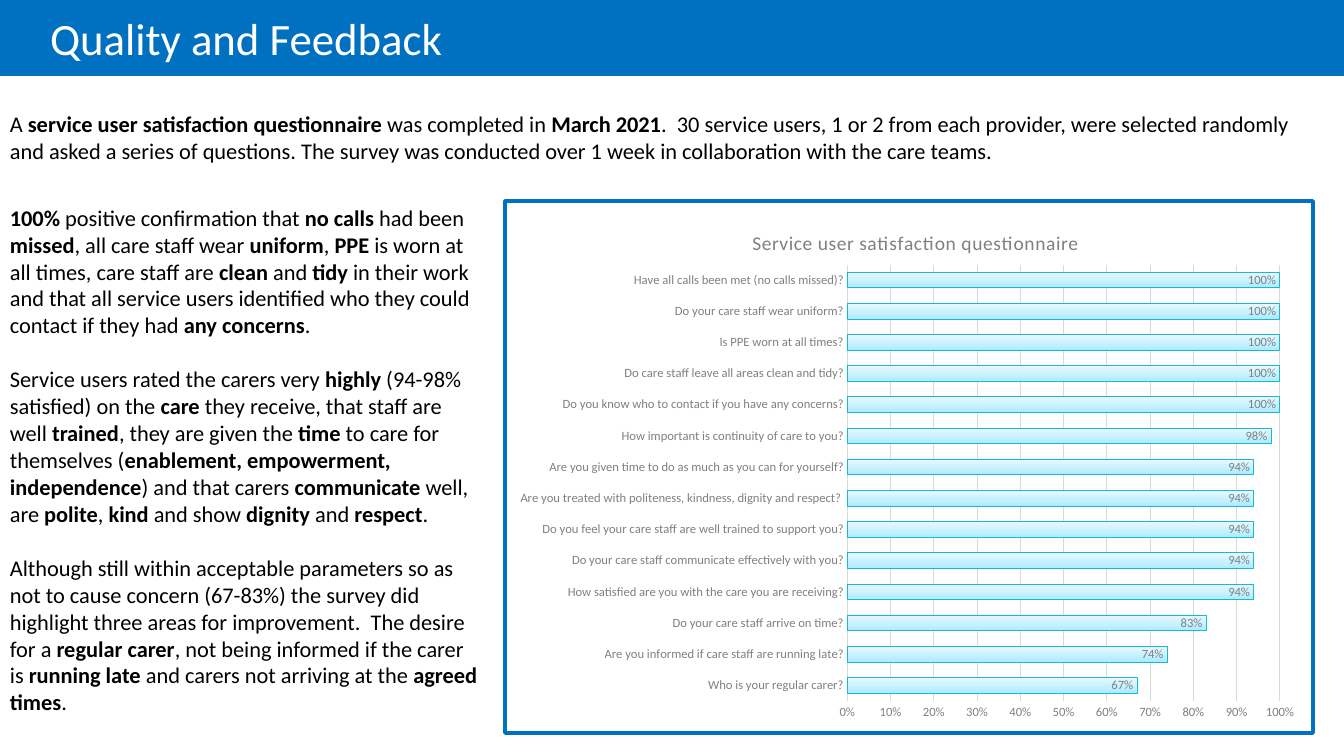
from lxml import etree
from pptx import Presentation
from pptx.chart.data import CategoryChartData
from pptx.dml.color import RGBColor
from pptx.enum.chart import XL_CHART_TYPE, XL_LABEL_POSITION, XL_TICK_MARK
from pptx.enum.shapes import MSO_SHAPE
from pptx.enum.text import MSO_ANCHOR, PP_ALIGN
from pptx.oxml import parse_xml
from pptx.oxml.ns import nsdecls, qn
from pptx.util import Emu, Pt

BAR_CLUSTERED = XL_CHART_TYPE.BAR_CLUSTERED
INSIDE_END = XL_LABEL_POSITION.INSIDE_END
NO_TICK = XL_TICK_MARK.NONE
RECTANGLE = MSO_SHAPE.RECTANGLE
MIDDLE = MSO_ANCHOR.MIDDLE
LEFT = PP_ALIGN.LEFT

PX = 12192000 / 1344
FONT = "Calibri"
COLORS = {
    "blue": "0070C0", "white": "FFFFFF", "black": "000000", "gray": "808080",
    "grid": "D9D9D9", "bar_line": "1BB8D1",
}
BAR_GRADIENT = [(0, "AAEBFF"), (35, "C3F0FF"), (100, "E8F9FF")]

INTRO = [
    "A **service user satisfaction questionnaire **was completed in **March 2021**.  30 service "
    "users, 1 or 2 from each provider, were selected randomly and asked a series of questions. "
    "The survey was conducted over 1 week in collaboration with the care teams.",
]
FINDINGS = [
    "**100%** positive confirmation that **no calls **had been **missed**, all care staff wear "
    "**uniform**, **PPE** is worn at all times, care staff are **clean** and **tidy** in their "
    "work and that all service users identified who they could contact if they had "
    "**any concerns**.",
    "Service users rated the carers very **highly** (94-98% satisfied) on the **care** they "
    "receive, that staff are well **trained**, they are given the **time** to care for themselves "
    "(**enablement, empowerment, independence**) and that carers **communicate** well, are "
    "**polite**, **kind** and show **dignity** and **respect**.",
    "Although still within acceptable parameters so as not to cause concern (67-83%) the survey "
    "did highlight three areas for improvement.  The desire for a **regular carer**, not being "
    "informed if the carer is **running late **and carers not arriving at the **agreed times**.",
]
ANSWERS = [
    ("Who is your regular carer?", 0.67),
    ("Are you informed if care staff are running late?", 0.74),
    ("Do your care staff arrive on time?", 0.83),
    ("How satisfied are you with the care you are receiving?", 0.94),
    ("Do your care staff communicate effectively with you?", 0.94),
    ("Do you feel your care staff are well trained to support you?", 0.94),
    ("Are you treated with politeness, kindness, dignity and respect? ", 0.94),
    ("Are you given time to do as much as you can for yourself?", 0.94),
    ("How important is continuity of care to you?", 0.98),
    ("Do you know who to contact if you have any concerns?", 1),
    ("Do care staff leave all areas clean and tidy?", 1),
    ("Is PPE worn at all times?", 1),
    ("Do your care staff wear uniform?", 1),
    ("Have all calls been met (no calls missed)?", 1),
]


def px(length):
    return Emu(round(length * PX))


class SlideBuilder:
    """Draws styled elements on one slide; boxes are (left, top, width, height) in px."""

    def __init__(self, slide):
        self.slide = slide

    def color(self, name):
        return RGBColor.from_string(COLORS[name])

    def style_font(self, font, size, color, bold=False):
        font.name, font.size, font.bold = FONT, Pt(size), bold
        font.color.rgb = self.color(color)

    def style_line(self, line, color, width):
        line.color.rgb = self.color(color)
        line.width = Pt(width)

    def title_band(self, box, text, indent):
        shape = self.slide.shapes.add_shape(RECTANGLE, *map(px, box))
        shape.shadow.inherit = False
        shape.fill.solid()
        shape.fill.fore_color.rgb = self.color("blue")
        shape.line.fill.background()
        text_frame = shape.text_frame
        text_frame.margin_left = px(indent)
        text_frame.vertical_anchor = MIDDLE
        text_frame.text = text
        paragraph = text_frame.paragraphs[0]
        paragraph.alignment = LEFT
        self.style_font(paragraph.runs[0].font, 32, "white")

    def rich_text(self, box, texts):
        """Adds one paragraph per text; parts between ** marks are bold."""
        text_frame = self.slide.shapes.add_textbox(*map(px, box)).text_frame
        text_frame.word_wrap = True
        for index, text in enumerate(texts):
            paragraph = text_frame.add_paragraph() if index else text_frame.paragraphs[0]
            if index:
                paragraph.space_before = Pt(19.5)
            for position, part in enumerate(text.split("**")):
                if part:
                    run = paragraph.add_run()
                    run.text = part
                    self.style_font(run.font, 16, "black", bold=position % 2 == 1)

    def bar_chart(self, box, title, answers, title_at, plot_box):
        data = CategoryChartData(number_format="0%")
        data.categories = [question for question, share in answers]
        data.add_series("Series 1", [share for question, share in answers])
        chart = self.slide.shapes.add_chart(BAR_CLUSTERED, *map(px, box), data).chart
        self.style_font(chart.font, 10, "black")
        chart.has_legend = False

        chart.has_title = True
        chart.chart_title.include_in_layout = False
        chart.chart_title.text_frame.text = title
        run = chart.chart_title.text_frame.paragraphs[0].runs[0]
        self.style_font(run.font, 14, "gray")
        run.font._element.set("spc", "30")

        for axis in (chart.category_axis, chart.value_axis):
            axis.major_tick_mark = axis.minor_tick_mark = NO_TICK
            self.style_font(axis.tick_labels.font, 9, "gray")
        self.style_line(chart.category_axis.format.line, "grid", 0.75)
        values = chart.value_axis
        values.minimum_scale, values.maximum_scale, values.major_unit = 0, 1, 0.1
        values.format.line.fill.background()
        values.tick_labels.number_format = "0%"
        values.tick_labels.number_format_is_linked = False
        self.style_line(values.major_gridlines.format.line, "grid", 0.75)

        plot = chart.plots[0]
        plot.gap_width = 100
        plot.vary_by_categories = False
        series = plot.series[0]
        series.invert_if_negative = False
        self.style_line(series.format.line, "bar_line", 0.75)
        series.format.fill.gradient()
        series.format.fill.gradient_angle = 90
        self.set_gradient_stops(chart, BAR_GRADIENT)
        labels = series.data_labels
        labels.show_value = True
        labels.position = INSIDE_END
        labels.number_format = "0%"
        labels.number_format_is_linked = False
        self.style_font(labels.font, 9, "gray")

        self.set_layout(chart.element.find(".//" + qn("c:title")), box, title_at)
        self.set_layout(chart.element.find(".//" + qn("c:plotArea")), box, plot_box)
        self.set_border(chart, "blue", 3)

    def set_gradient_stops(self, chart, stops):
        stop_list = chart.element.find(".//" + qn("a:gsLst"))
        for stop in list(stop_list):
            stop_list.remove(stop)
        for percent, color in stops:
            stop = etree.SubElement(stop_list, qn("a:gs"), pos=str(percent * 1000))
            etree.SubElement(stop, qn("a:srgbClr"), val=color)

    def set_layout(self, parent, chart_box, place):
        """Pins a chart part at slide px: (left, top) or (left, top, width, height)."""
        for old in parent.findall(qn("c:layout")):
            parent.remove(old)
        layout = etree.Element(qn("c:layout"))
        manual = etree.SubElement(layout, qn("c:manualLayout"))
        if len(place) == 4:
            etree.SubElement(manual, qn("c:layoutTarget"), val="inner")
        for name in ("xMode", "yMode"):
            etree.SubElement(manual, qn("c:" + name), val="edge")
        left, top, width, height = chart_box
        origin, extent = (left, top, 0, 0), (width, height, width, height)
        for name, value, start, size in zip("xywh", place, origin, extent):
            etree.SubElement(manual, qn("c:" + name), val=f"{(value - start) / size:.4f}")
        text = parent.find(qn("c:tx"))
        if text is None:
            parent.insert(0, layout)
        else:
            text.addnext(layout)

    def set_border(self, chart, color, width):
        chart.element.find(qn("c:chart")).addnext(parse_xml(
            f'<c:spPr {nsdecls("c", "a")}><a:noFill/><a:ln w="{Pt(width)}"><a:solidFill>'
            f'<a:srgbClr val="{COLORS[color]}"/></a:solidFill></a:ln></c:spPr>'))


def main():
    presentation = Presentation()
    presentation.slide_width, presentation.slide_height = px(1344), px(756)
    builder = SlideBuilder(presentation.slides.add_slide(presentation.slide_layouts[6]))
    builder.title_band((0, 0, 1344, 76), "Quality and Feedback", indent=50)
    builder.rich_text((0, 105, 1315, 65), INTRO)
    builder.bar_chart((503, 199, 812, 536), "Service user satisfaction questionnaire", ANSWERS,
                      title_at=(748, 224), plot_box=(847, 263, 435, 440))
    builder.rich_text((0, 199, 491, 526), FINDINGS)
    presentation.save("out.pptx")


if __name__ == "__main__":
    main()
